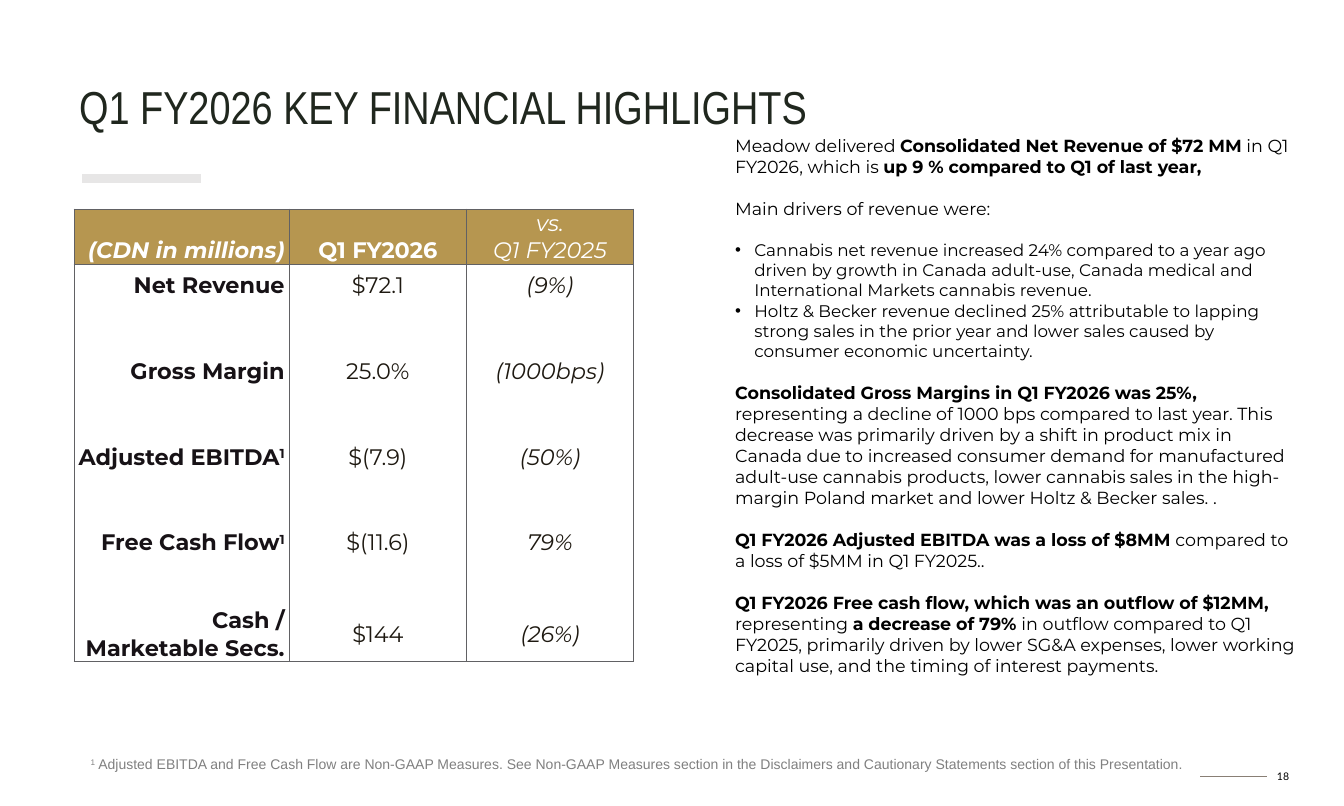
from dataclasses import dataclass
from typing import Iterable

from lxml.etree import SubElement
from pptx import Presentation
from pptx.dml.color import RGBColor as RGB
from pptx.enum.shapes import MSO_CONNECTOR as CONNECTOR
from pptx.enum.text import MSO_ANCHOR as ANCHOR, MSO_AUTO_SIZE as AUTOSIZE, PP_ALIGN as ALIGN
from pptx.oxml.ns import qn
from pptx.util import Emu, Inches, Pt


@dataclass(frozen=True)
class Theme:
    title_font: str = "Arial Narrow"
    body_font: str = "Montserrat"
    note_font: str = "Arial"
    number_font: str = "Lato"
    title_size: float = 66
    table_size: float = 32
    body_size: float = 25
    bullet_size: float = 24
    note_size: float = 20
    number_size: float = 15
    title: str = "20271E"
    body: str = "000000"
    note: str = "808080"
    gold: str = "B69650"
    white: str = "FFFFFF"
    label: str = "171216"
    figure: str = "1E1911"
    border: str = "616164"
    accent: str = "E7E6E6"
    rule: str = "897F75"


THEME = Theme()


@dataclass(frozen=True)
class Style:
    font: str
    size: float
    color: str


@dataclass(frozen=True)
class Piece:
    text: str
    bold: bool = False
    italic: bool = False
    raised: bool = False


@dataclass(frozen=True)
class Remark:
    pieces: tuple[Piece, ...]
    bullet: bool = False
    gap: float = 30


@dataclass(frozen=True)
class Metric:
    name: str
    current: str
    change: str
    footnote: str = ""


METRICS = (
    Metric("Net Revenue", "$72.1", "(9%)"),
    Metric("Gross Margin", "25.0%", "(1000bps)"),
    Metric("Adjusted EBITDA", "$(7.9)", "(50%)", "1"),
    Metric("Free Cash Flow", "$(11.6)", "79%", "1"),
    Metric("Cash / Marketable Secs.", "$144", "(26%)"),
)

REMARKS = (
    Remark((Piece("Meadow delivered "), Piece("Consolidated Net Revenue of $72 MM", True),
            Piece(" in Q1 FY2026, which is "),
            Piece("up 9 % compared to Q1 of last year,", True)), gap=0),
    Remark((Piece("Main drivers of revenue were:"),)),
    Remark((Piece("Cannabis net revenue increased 24% compared to a year ago driven by growth in "
                  "Canada adult-use, Canada medical and International Markets cannabis revenue."),),
           bullet=True),
    Remark((Piece("Holtz & Becker revenue declined 25% attributable to lapping strong sales in the "
                  "prior year and lower sales caused by consumer economic uncertainty."),),
           bullet=True, gap=0),
    Remark((Piece("Consolidated Gross Margins in Q1 FY2026 was 25%, ", True),
            Piece("representing a decline of 1000 bps compared to last year. This decrease was "
                  "primarily driven by a shift in product mix in Canada due to increased consumer "
                  "demand for manufactured adult-use cannabis products, lower cannabis sales in the "
                  "high-margin Poland market and lower Holtz & Becker sales. ."))),
    Remark((Piece("Q1 FY2026 Adjusted EBITDA was a loss of $8MM ", True),
            Piece("compared to a loss of $5MM in Q1 FY2025.."))),
    Remark((Piece("Q1 FY2026 Free cash flow, which was an outflow of $12MM, ", True),
            Piece("representing "), Piece("a decrease of 79% ", True),
            Piece("in outflow compared to Q1 FY2025, primarily driven by lower SG&A expenses, lower "
                  "working capital use, and the timing of interest payments."))),
)


def add_pieces(paragraph, pieces: Iterable[Piece], style: Style) -> None:
    for piece in pieces:
        run = paragraph.add_run()
        run.text = piece.text
        font = run.font
        font.name, font.size = style.font, Pt(style.size)
        font.bold, font.italic = piece.bold, piece.italic
        font.color.rgb = RGB.from_string(style.color)
        if piece.raised:
            font._element.set("baseline", "30000")


def add_rule(slide, start: float, end: float, y: float, color: str, width: float) -> None:
    rule = slide.shapes.add_connector(
        CONNECTOR.STRAIGHT, Inches(start), Inches(y), Inches(end), Inches(y))
    rule.line.color.rgb = RGB.from_string(color)
    rule.line.width = Pt(width)
    SubElement(rule._element.spPr, qn("a:effectLst"))


def add_text_frame(slide, left: float, top: float, width: float, height: float, inset=(0.1, 0.05)):
    box = slide.shapes.add_textbox(Inches(left), Inches(top), Inches(width), Inches(height))
    frame = box.text_frame
    frame.word_wrap = True
    frame.margin_left = frame.margin_right = Inches(inset[0])
    frame.margin_top = frame.margin_bottom = Inches(inset[1])
    return frame


def set_borders(cell, sides: str) -> None:
    """Draw the sides named by L, R, T and B; hide the others."""
    properties = cell._tc.get_or_add_tcPr()
    for side in "LRTB":
        edge = SubElement(properties, qn(f"a:ln{side}"), w=str(Pt(1.5)))
        if side in sides:
            fill = SubElement(edge, qn("a:solidFill"))
            SubElement(fill, qn("a:srgbClr"), val=THEME.border)
        else:
            SubElement(edge, qn("a:noFill"))


def fill_cell(cell, lines: Iterable[tuple[Piece, ...]], color: str, is_label: bool, anchor) -> None:
    cell.margin_left = Inches(0 if is_label else 0.01)
    cell.margin_right = Inches(0.09 if is_label else 0.01)
    cell.margin_top, cell.margin_bottom = Inches(0.01), Emu(0)
    cell.vertical_anchor = anchor
    frame = cell.text_frame
    for index, pieces in enumerate(lines):
        paragraph = frame.add_paragraph() if index else frame.paragraphs[0]
        paragraph.alignment = ALIGN.RIGHT if is_label else ALIGN.CENTER
        add_pieces(paragraph, pieces, Style(THEME.body_font, THEME.table_size, color))


def add_metrics_table(slide) -> None:
    """Metrics take every other row below the header, with empty rows between."""
    widths, row_count = (4.27, 3.52, 3.31), 2 * len(METRICS)
    last = row_count - 1
    edges = {0: "LRTB", 1: "LRT", last: "LRB"}
    table = slide.shapes.add_table(row_count, len(widths), Inches(1.47), Inches(4.15),
                                   Inches(sum(widths)), Inches(8.92)).table
    table.first_row = table.horz_banding = False
    for column, width in zip(table.columns, widths):
        column.width = Inches(width)
    for index, row in enumerate(table.rows):
        row.height = Inches(1.07 if index in (0, last) else 0.85)
        for cell in row.cells:
            set_borders(cell, edges.get(index, "LR"))
            cell.fill.solid()
            cell.fill.fore_color.rgb = RGB.from_string(THEME.white if index else THEME.gold)

    headings = (
        [(Piece("(CDN in millions)", True, True),)],
        [(Piece("Q1 FY2026", True),)],
        [(Piece("vs.", italic=True),), (Piece("Q1 FY2025", italic=True),)],
    )
    for column, heading in enumerate(headings):
        fill_cell(table.cell(0, column), heading, THEME.white, column == 0, ANCHOR.BOTTOM)
    for index, metric in enumerate(METRICS):
        name = (Piece(metric.name, True),)
        if metric.footnote:
            name += (Piece(metric.footnote, True, raised=True),)
        contents = (name, (Piece(metric.current),), (Piece(metric.change, italic=True),))
        for column, pieces in enumerate(contents):
            color = THEME.figure if column else THEME.label
            fill_cell(table.cell(2 * index + 1, column), [pieces], color, column == 0, ANCHOR.MIDDLE)


def add_commentary(slide) -> None:
    frame = add_text_frame(slide, 14.49, 2.63, 11.37, 10.61)
    for index, remark in enumerate(REMARKS):
        paragraph = frame.add_paragraph() if index else frame.paragraphs[0]
        paragraph.space_before = Pt(remark.gap)
        if remark.bullet:
            properties = paragraph._p.get_or_add_pPr()
            properties.set("marL", str(Inches(0.38)))
            properties.set("indent", str(-Inches(0.38)))
            SubElement(properties, qn("a:buFont"), typeface="Arial")
            SubElement(properties, qn("a:buChar"), char="•")
        size = THEME.bullet_size if remark.bullet else THEME.body_size
        add_pieces(paragraph, remark.pieces, Style(THEME.body_font, size, THEME.body))


def add_title(slide) -> None:
    title = slide.shapes.title
    title.left, title.top, title.width, title.height = map(Inches, (1.47, 1.62, 20.71, 1.52))
    frame = title.text_frame
    frame.auto_size, frame.vertical_anchor = AUTOSIZE.NONE, ANCHOR.TOP
    paragraph = frame.paragraphs[0]
    paragraph.alignment, paragraph.line_spacing = ALIGN.LEFT, 0.9
    add_pieces(paragraph, [Piece("Q1 FY2026 KEY FINANCIAL HIGHLIGHTS")],
               Style(THEME.title_font, THEME.title_size, THEME.title))


def add_footer(slide) -> None:
    add_rule(slide, 25.14, 23.81, 15.41, THEME.rule, 0.75)
    number = add_text_frame(slide, 25.28, 15.22, 0.6, 0.36, (0.06, 0.06))
    add_pieces(number.paragraphs[0], [Piece("18")],
               Style(THEME.number_font, THEME.number_size, THEME.body))
    footnote = add_text_frame(slide, 1.7, 14.95, 24.9, 0.44)
    add_pieces(footnote.paragraphs[0], [
        Piece("1", raised=True),
        Piece(" Adjusted EBITDA and Free Cash Flow are Non-GAAP Measures. See Non-GAAP Measures "
              "section in the Disclaimers and Cautionary Statements section of this Presentation."),
    ], Style(THEME.note_font, THEME.note_size, THEME.note))


def main() -> None:
    deck = Presentation()
    deck.slide_width, deck.slide_height = Inches(26.67), Inches(16)
    slide = deck.slides.add_slide(deck.slide_layouts[5])
    add_title(slide)
    add_rule(slide, 1.63, 3.99, 3.54, THEME.accent, 12.25)
    add_metrics_table(slide)
    add_commentary(slide)
    add_footer(slide)
    deck.save("out.pptx")


if __name__ == "__main__":
    main()
